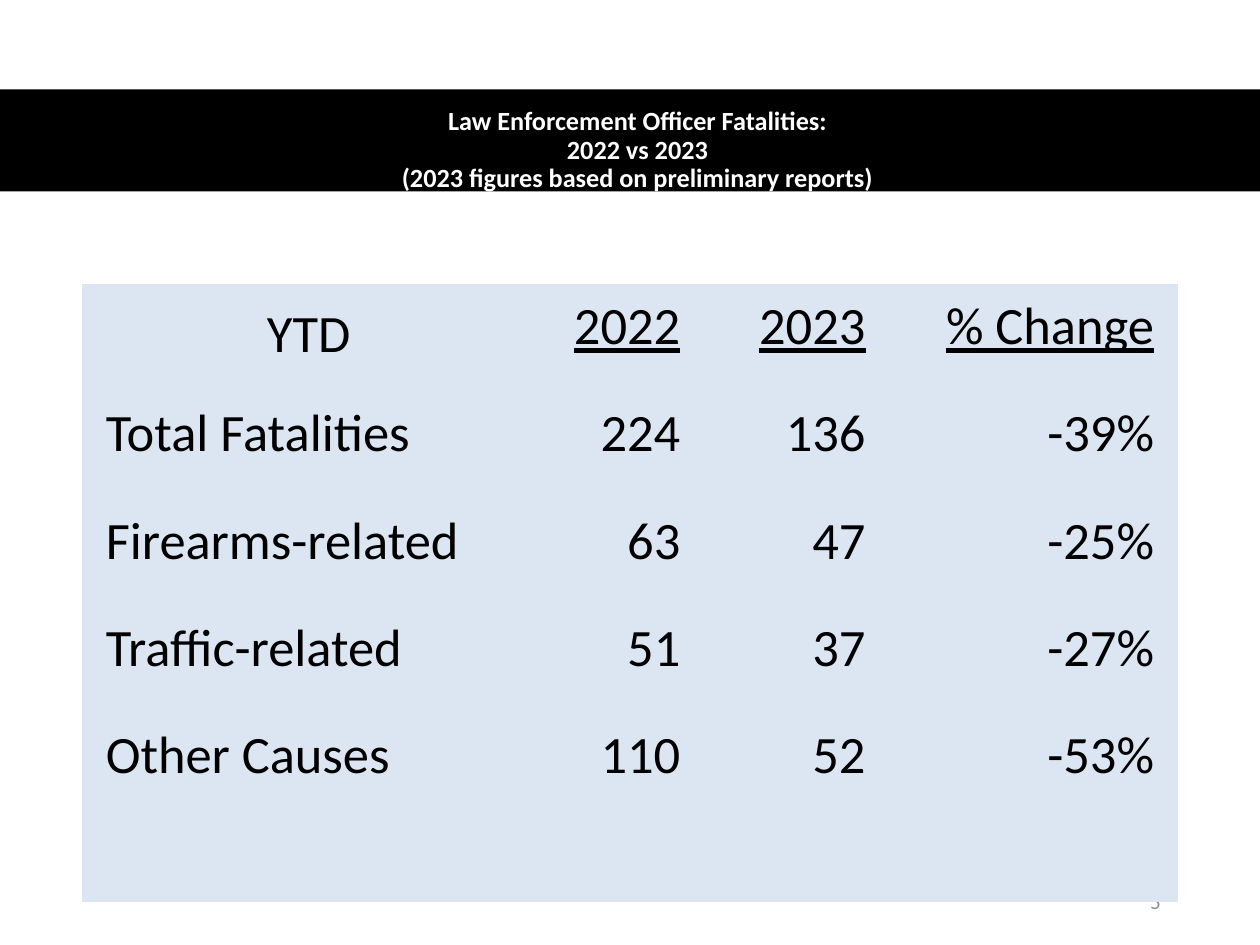
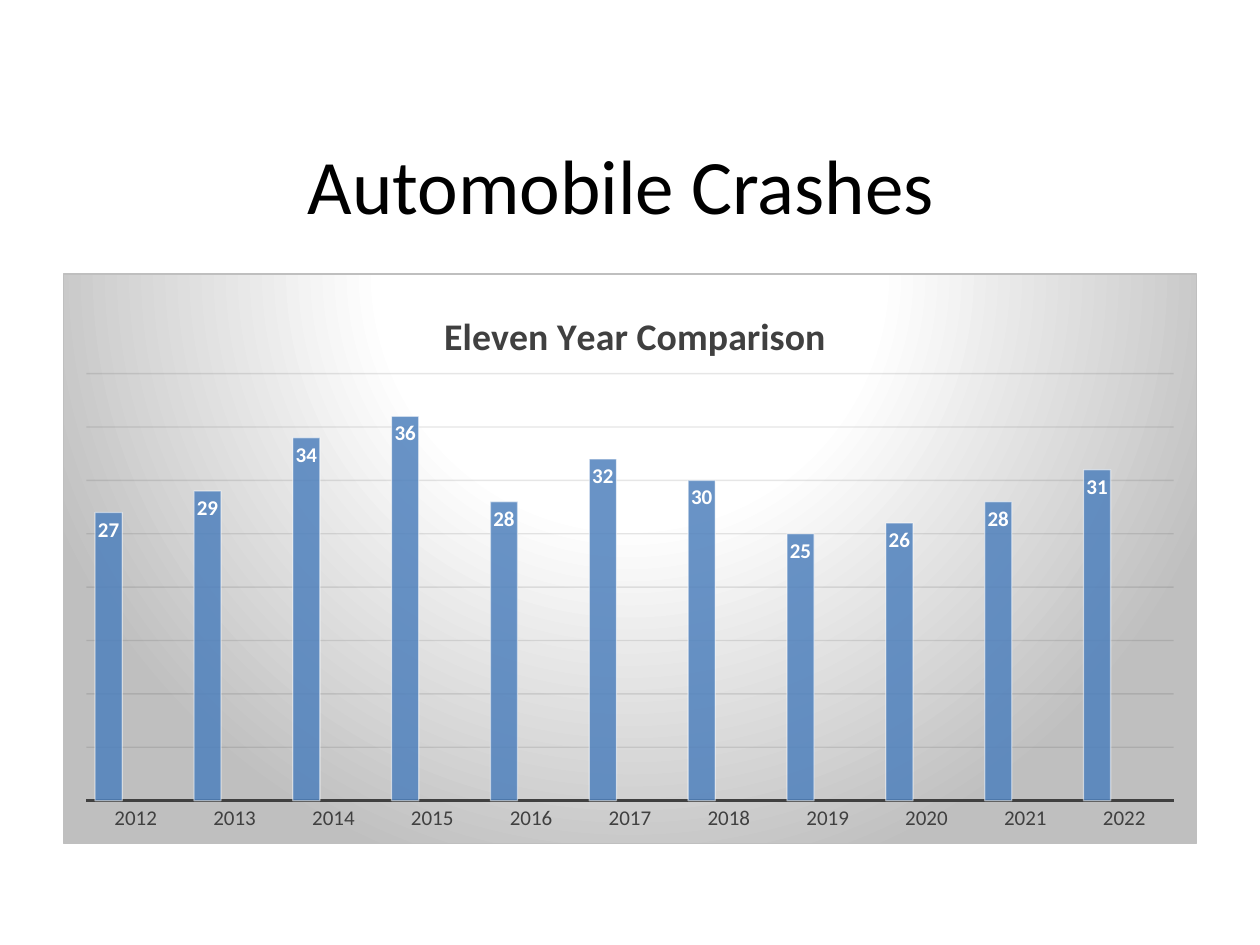
from lxml import etree
from pptx import Presentation
from pptx.chart.data import CategoryChartData
from pptx.dml.color import RGBColor
from pptx.enum.chart import XL_CHART_TYPE as ChartType, XL_LABEL_POSITION as LabelPos
from pptx.enum.chart import XL_TICK_MARK as TickMark
from pptx.enum.shapes import MSO_SHAPE as Shape
from pptx.enum.text import MSO_ANCHOR as Anchor, MSO_AUTO_SIZE as AutoSize, PP_ALIGN as Align
from pptx.oxml import parse_xml
from pptx.oxml.ns import nsdecls, qn
from pptx.util import Inches, Pt

COLORS = {
    "black": "000000", "white": "FFFFFF", "number": "8C8C8C", "table": "DCE6F2",
    "axis": "404040", "grid": "0D0D0D", "edge": "BFBFBF",
    "blue": "4F81BD", "red": "C0504D", "green": "9BBB59",
}
NO_GRID_STYLE = "{2D5ABB26-0587-4C30-8999-92F81FD0307C}"


def rgb(name):
    return RGBColor.from_string(COLORS[name])


def set_alpha(element, percent):
    """Make the first colour inside the element partly transparent."""
    color = next(element.iter(qn("a:srgbClr")))
    etree.SubElement(color, qn("a:alpha")).set("val", str(percent * 1000))


def layout_xml(inner=False, **fractions):
    target = '<c:layoutTarget val="inner"/>' if inner else ""
    modes = '<c:xMode val="edge"/><c:yMode val="edge"/>'
    sizes = "".join(f'<c:{key} val="{value}"/>' for key, value in fractions.items())
    return parse_xml(f'<c:layout {nsdecls("c")}><c:manualLayout>{target}{modes}{sizes}'
                     '</c:manualLayout></c:layout>')


class Deck:
    """Holds the shared style and the slide being built."""

    font = "Calibri"

    def __init__(self):
        self.prs = Presentation()
        self.prs.slide_width, self.prs.slide_height = Inches(10), Inches(7.5)
        self.slide = None

    def new_slide(self):
        self.slide = self.prs.slides.add_slide(self.prs.slide_layouts[5])

    def style(self, font, size, color, bold=False, underline=False):
        font.name, font.size, font.bold = self.font, Pt(size), bold
        font.underline = underline
        font.color.rgb = rgb(color)

    def add_lines(self, paragraph, lines, align, size, color, **emphasis):
        paragraph.alignment = align
        for index, line in enumerate(lines):
            if index:
                paragraph.add_line_break()
            run = paragraph.add_run()
            run.text = line
            self.style(run.font, size, color, **emphasis)

    def title(self, lines, box, size, color="black", bold=False, spacing=1.0):
        title = self.slide.shapes.title
        title.left, title.top, title.width, title.height = map(Inches, box)
        frame = title.text_frame
        frame.auto_size, frame.vertical_anchor = AutoSize.NONE, Anchor.MIDDLE
        frame.paragraphs[0].line_spacing = spacing
        self.add_lines(frame.paragraphs[0], lines, Align.CENTER, size, color, bold=bold)

    def band(self, top, height):
        band = self.slide.shapes.add_shape(
            Shape.RECTANGLE, 0, Inches(top), self.prs.slide_width, Inches(height))
        band.shadow.inherit = False
        band.fill.solid()
        band.fill.fore_color.rgb = rgb("black")
        band.line.fill.background()
        # The band lies behind the title
        self.slide.shapes.title.element.addprevious(band.element)

    def page_number(self, number):
        box = self.slide.shapes.add_textbox(*map(Inches, (7.06, 6.95, 2.25, 0.4)))
        frame = box.text_frame
        frame.word_wrap, frame.vertical_anchor = True, Anchor.MIDDLE
        self.add_lines(frame.paragraphs[0], [number], Align.RIGHT, 12, "number")

    def table(self, rows, left, top, widths, heights):
        table = self.slide.shapes.add_table(
            len(rows), len(widths), Inches(left), Inches(top),
            Inches(sum(widths)), Inches(sum(heights))).table
        table.first_row = table.horz_banding = False
        next(table._tbl.iter(qn("a:tableStyleId"))).text = NO_GRID_STYLE
        for column, width in zip(table.columns, widths):
            column.width = Inches(width)
        for r, (values, height) in enumerate(zip(rows, heights)):
            table.rows[r].height = Inches(height)
            for c, value in enumerate(values):
                self.cell(table.cell(r, c), value, heading=r == 0, label=c == 0)

    def cell(self, cell, value, heading, label):
        cell.fill.solid()
        cell.fill.fore_color.rgb = rgb("table")
        cell.margin_left = cell.margin_right = cell.margin_bottom = Inches(0.19)
        cell.margin_top = Inches(0.09)
        cell.vertical_anchor = Anchor.BOTTOM if heading and label else Anchor.TOP
        align = Align.RIGHT if not label else Align.CENTER if heading else Align.LEFT
        self.add_lines(cell.text_frame.paragraphs[0], [value], align, 30, "black",
                       underline=heading and not label)

    def column_chart(self, heading, categories, series, box):
        data = CategoryChartData()
        data.categories = categories
        for name, values, _ in series:
            data.add_series(name, values)
        chart = self.slide.shapes.add_chart(
            ChartType.COLUMN_CLUSTERED, *map(Inches, box), data).chart
        self.style(chart.font, 10, "black")
        chart.has_legend = False

        # Heading and plot area
        title = chart.chart_title
        self.add_lines(title.text_frame.paragraphs[0], [heading], Align.CENTER, 21.6, "axis",
                       bold=True)
        plot_area = next(chart.element.iter(qn("c:plotArea")))
        for part in (title._element, plot_area):
            for old in part.findall(qn("c:layout")):
                part.remove(old)
        title._element.find(qn("c:tx")).addnext(layout_xml(x=0.33, y=0.05))
        plot_area.insert(0, layout_xml(inner=True, x=0.02, y=0.175, w=0.96, h=0.75))

        # Axes
        years = chart.category_axis
        years.major_tick_mark = years.minor_tick_mark = TickMark.NONE
        self.style(years.tick_labels.font, 12, "axis")
        years.format.line.color.rgb = rgb("axis")
        years.format.line.width = Pt(1.5)
        crashes = chart.value_axis
        crashes.visible = False
        crashes.minimum_scale, crashes.maximum_scale, crashes.major_unit = 0, 40, 5
        grid = crashes.major_gridlines
        grid.format.line.color.rgb = rgb("grid")
        grid.format.line.width = Pt(0.75)
        set_alpha(next(chart.element.iter(qn("c:majorGridlines"))), 10)

        # Columns and their labels
        plot = chart.plots[0]
        plot.gap_width, plot.overlap, plot.vary_by_categories = 65, 0, False
        for column, (_, _, color) in zip(plot.series, series):
            column.format.fill.solid()
            column.format.fill.fore_color.rgb = rgb(color)
            column.format.line.color.rgb = rgb("white")
            column.format.line.width = Pt(0.75)
            shape_props = column._element.find(qn("c:spPr"))
            set_alpha(shape_props.find(qn("a:solidFill")), 85)
            set_alpha(shape_props.find(qn("a:ln")), 50)
            labels = column.data_labels
            labels.show_value, labels.position = True, LabelPos.INSIDE_END
            self.style(labels.font, 12, "white", bold=True)
        self.chart_background(chart)

    def chart_background(self, chart):
        stops = "".join(
            f'<a:gs pos="{place * 1000}"><a:srgbClr val="{COLORS[color]}"/></a:gs>'
            for place, color in ((0, "white"), (39, "white"), (100, "edge")))
        background = parse_xml(
            f'<c:spPr {nsdecls("c", "a")}><a:gradFill><a:gsLst>{stops}</a:gsLst>'
            '<a:path path="circle">'
            '<a:fillToRect l="50000" t="-80000" r="50000" b="180000"/></a:path></a:gradFill>'
            f'<a:ln w="{Pt(0.75)}"><a:solidFill><a:srgbClr val="{COLORS["edge"]}"/>'
            '</a:solidFill></a:ln></c:spPr>')
        chart.element.find(qn("c:chart")).addnext(background)


def main():
    deck = Deck()

    # Fatalities table
    deck.new_slide()
    deck.band(0.71, 0.81)
    deck.title(["Law Enforcement Officer Fatalities:", "2022 vs 2023",
                "(2023 figures based on preliminary reports)"],
               (0.46, 0.33, 9.2, 1.73), 15, "white", bold=True, spacing=0.9)
    deck.page_number("5")
    fatalities = [
        ("YTD", "2022", "2023", "% Change"),
        ("Total Fatalities", "224", "136", "-39%"),
        ("Firearms-related", "63", "47", "-25%"),
        ("Traffic-related", "51", "37", "-27%"),
        ("Other Causes", "110", "52", "-53%"),
    ]
    deck.table(fatalities, 0.65, 2.25, [3.6, 1.34, 1.47, 2.29], [0.85] * 4 + [1.51])

    # Crashes chart
    deck.new_slide()
    deck.title(["Automobile Crashes "], (0.5, 0.83, 9, 1.25), 44)
    years = [str(year) for year in range(2012, 2023)]
    no_values = [None] * len(years)
    series = [
        ("Series 1", [27, 29, 34, 36, 28, 32, 30, 25, 26, 28, 31], "blue"),
        ("Series 2", no_values, "red"),
        ("Series 3", no_values, "green"),
    ]
    deck.column_chart("Eleven Year Comparison", years, series, (0.5, 2.17, 9, 4.53))

    deck.prs.save("out.pptx")


if __name__ == "__main__":
    main()
